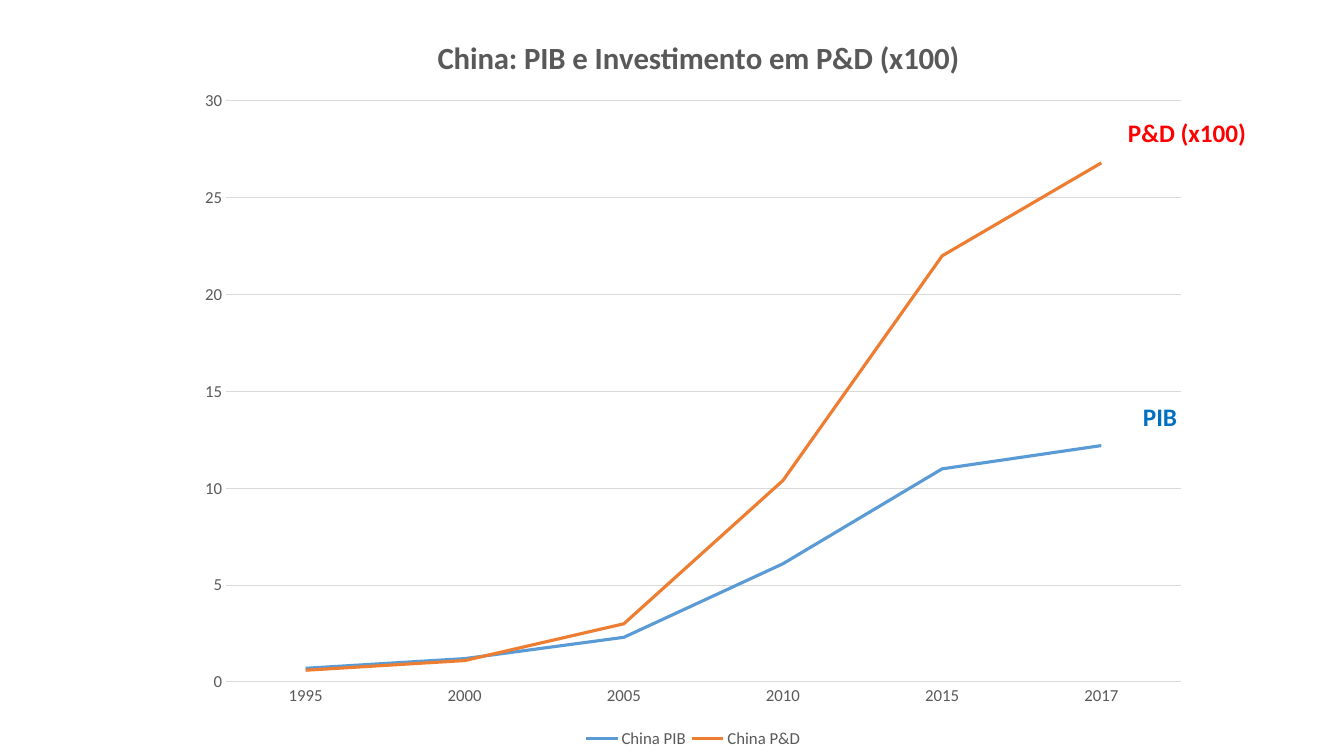
from dataclasses import dataclass

from lxml import etree
from pptx import Presentation
from pptx.chart.data import CategoryChartData
from pptx.dml.color import RGBColor
from pptx.enum.chart import XL_CHART_TYPE, XL_LEGEND_POSITION, XL_TICK_MARK
from pptx.enum.text import MSO_AUTO_SIZE
from pptx.oxml.ns import qn
from pptx.util import Emu, Pt

LINE_CHART = XL_CHART_TYPE.LINE
LEGEND_BOTTOM = XL_LEGEND_POSITION.BOTTOM
NO_TICKS = XL_TICK_MARK.NONE
FIT_SHAPE = MSO_AUTO_SIZE.SHAPE_TO_FIT_TEXT

SLIDE_WIDTH, SLIDE_HEIGHT = 1344, 756
EMU_PER_PX = 12192000 / SLIDE_WIDTH


@dataclass(frozen=True)
class Theme:
    font: str = "Calibri"
    title_size: int = 22
    label_size: int = 18
    axis_size: int = 12
    series_width: float = 2.25
    grid_width: float = 0.75
    text: str = "595959"
    grid: str = "D9D9D9"
    gdp_line: str = "5B9BD5"
    research_line: str = "ED7D31"
    gdp_label: str = "0070C0"
    research_label: str = "FF0000"


THEME = Theme()
YEARS = ["1995", "2000", "2005", "2010", "2015", "2017"]
SERIES = [
    ("China PIB", [0.7, 1.2, 2.3, 6.1, 11, 12.2], THEME.gdp_line),
    ("China P&D", [0.6, 1.1, 3, 10.4, 22, 26.8], THEME.research_line),
]
CHART_BOX = (184, 0, 1017, 756)
PLOT_BOX = (226, 101, 955, 581)
TITLE_CORNER = (432, 31)
LEGEND_BOX = (580, 730, 226, 24)
LABELS = [
    ("P&D (x100)", (1118, 112, 140, 40), THEME.research_label),
    ("PIB", (1133, 396, 55, 40), THEME.gdp_label),
]


def px(length):
    return Emu(round(length * EMU_PER_PX))


def set_font(font, size, color, bold=False):
    values = {"name": THEME.font, "size": Pt(size), "bold": bold}
    for name, value in values.items():
        setattr(font, name, value)
    font.color.rgb = RGBColor.from_string(color)


def set_line(line, color, width):
    line.color.rgb = RGBColor.from_string(color)
    line.width = Pt(width)


def place_part(element, index, box, inner=False):
    """Fix a chart part at a slide position, stored as fractions of the chart."""
    for old_layout in element.findall(qn("c:layout")):
        element.remove(old_layout)
    layout = etree.Element(qn("c:layout"))
    element.insert(index, layout)
    manual = etree.SubElement(layout, qn("c:manualLayout"))
    left, top, width, height = CHART_BOX
    fractions = [(box[0] - left) / width, (box[1] - top) / height]
    if len(box) == 4:
        fractions += [box[2] / width, box[3] / height]
    settings = [("layoutTarget", "inner")] if inner else []
    settings += [("xMode", "edge"), ("yMode", "edge")]
    settings += [(key, f"{value:.4f}") for key, value in zip("xywh", fractions)]
    for tag, value in settings:
        etree.SubElement(manual, qn(f"c:{tag}")).set("val", value)


def add_title(chart, text):
    chart.has_title = True
    paragraph = chart.chart_title.text_frame.paragraphs[0]
    run = paragraph.add_run()
    run.text = text
    set_font(run.font, THEME.title_size, THEME.text, bold=True)
    chart.chart_title.include_in_layout = False
    place_part(chart.chart_title._element, 1, TITLE_CORNER)


def add_legend(chart):
    chart.has_legend = True
    chart.legend.position = LEGEND_BOTTOM
    chart.legend.include_in_layout = False
    set_font(chart.legend.font, THEME.axis_size, THEME.text)
    place_part(chart.legend._element, 1, LEGEND_BOX)


def format_axes(chart):
    years, amounts = chart.category_axis, chart.value_axis
    for axis in (years, amounts):
        axis.major_tick_mark = NO_TICKS
        axis.minor_tick_mark = NO_TICKS
        set_font(axis.tick_labels.font, THEME.axis_size, THEME.text)
    set_line(years.format.line, THEME.grid, THEME.grid_width)
    amounts.format.line.fill.background()
    scale = {"minimum_scale": 0, "maximum_scale": 30, "major_unit": 5}
    for name, value in scale.items():
        setattr(amounts, name, value)
    set_line(amounts.major_gridlines.format.line, THEME.grid, THEME.grid_width)


def add_line_chart(slide):
    data = CategoryChartData()
    data.categories = YEARS
    for name, values, _ in SERIES:
        data.add_series(name, values)
    frame = slide.shapes.add_chart(LINE_CHART, *map(px, CHART_BOX), data)
    chart = frame.chart
    set_font(chart.font, THEME.axis_size, THEME.text)
    plot = chart.plots[0]
    plot.vary_by_categories = False
    for series, (_, _, color) in zip(plot.series, SERIES):
        series.smooth = False
        set_line(series.format.line, color, THEME.series_width)
    add_title(chart, "China: PIB e Investimento em P&D (x100)")
    add_legend(chart)
    format_axes(chart)
    plot_area = chart._chartSpace.find(f".//{qn('c:plotArea')}")
    place_part(plot_area, 0, PLOT_BOX, inner=True)


def add_label(slide, text, box, color):
    frame = slide.shapes.add_textbox(*map(px, box)).text_frame
    frame.word_wrap = False
    frame.auto_size = FIT_SHAPE
    run = frame.paragraphs[0].add_run()
    run.text = text
    set_font(run.font, THEME.label_size, color, bold=True)


def main():
    presentation = Presentation()
    presentation.slide_width = px(SLIDE_WIDTH)
    presentation.slide_height = px(SLIDE_HEIGHT)
    slide = presentation.slides.add_slide(presentation.slide_layouts[6])
    add_line_chart(slide)
    for text, box, color in LABELS:
        add_label(slide, text, box, color)
    presentation.save("out.pptx")


if __name__ == "__main__":
    main()
